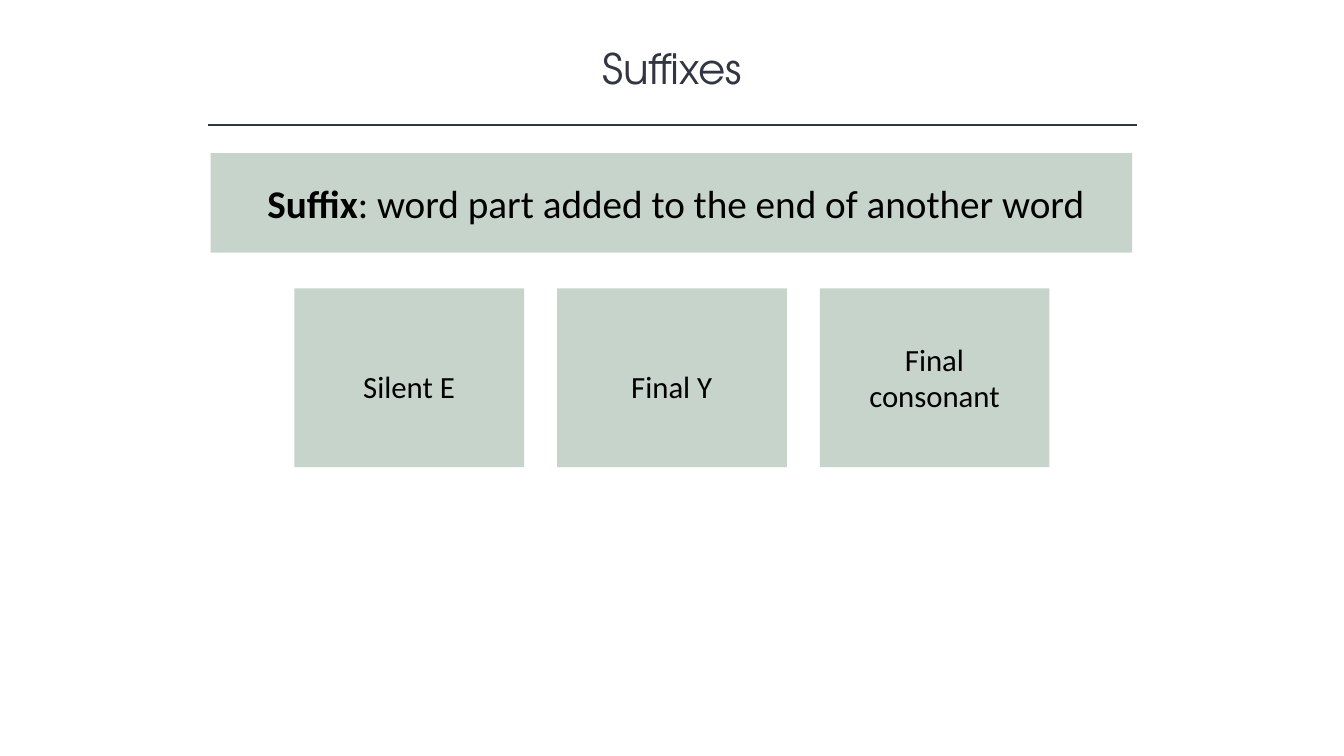
from pptx import Presentation
from pptx.dml.color import RGBColor
from pptx.enum.shapes import MSO_CONNECTOR, MSO_SHAPE
from pptx.enum.text import MSO_ANCHOR, PP_ALIGN
from pptx.oxml.ns import qn
from pptx.util import Cm, Pt
from lxml.etree import SubElement

COLORS = {"ink": "323542", "sage": "C7D4CB", "black": "000000"}


def color(name):
    return RGBColor.from_string(COLORS[name])


def write(shape, *runs, size, font="Calibri", ink="black", space=1.0, anchor=MSO_ANCHOR.MIDDLE):
    frame = shape.text_frame
    frame.word_wrap = True
    frame.vertical_anchor = anchor
    para = frame.paragraphs[0]
    para.alignment = PP_ALIGN.CENTER
    para.line_spacing = space
    for text, bold in runs:
        run = para.add_run()
        run.text = text
        run.font.size = Pt(size)
        run.font.name = font
        run.font.bold = bold
        run.font.color.rgb = color(ink)


def add_box(slide, left, top, width, height):
    box = slide.shapes.add_shape(
        MSO_SHAPE.RECTANGLE, Cm(left), Cm(top), Cm(width), Cm(height))
    box.shadow.inherit = False
    box.fill.solid()
    box.fill.fore_color.rgb = color("sage")
    box.line.fill.background()
    return box


def add_title(slide, text):
    box = slide.shapes.add_textbox(Cm(4.24), Cm(0.94), Cm(25.4), Cm(1.55))
    write(box, (text, False), size=30, font="TeX Gyre Adventor", ink="ink",
          anchor=MSO_ANCHOR.TOP)


def add_rule(slide, left, right, top):
    rule = slide.shapes.add_connector(
        MSO_CONNECTOR.STRAIGHT, Cm(left), Cm(top), Cm(right), Cm(top))
    rule.line.color.rgb = color("ink")
    rule.line.width = Pt(1)
    SubElement(rule._element.spPr, qn("a:effectLst"))


def add_card(slide, left, top, text, drop=1.48, height=1.52, space=1.5):
    add_box(slide, left, top, 5.79, 4.5)
    label = add_box(slide, left + 0.58, top + drop, 4.62, height)
    write(label, (text, False), size=22, space=space)


def main():
    deck = Presentation()
    deck.slide_width = Cm(33.87)
    deck.slide_height = Cm(19.05)
    slide = deck.slides.add_slide(deck.slide_layouts[6])

    add_title(slide, "Suffixes")
    add_rule(slide, 5.23, 28.65, 3.15)
    banner = add_box(slide, 5.31, 3.86, 23.22, 2.51)
    write(banner, (" ", False), ("Suffix", True),
          (": word part added to the end of another word", False), size=28)

    left, step, top = 7.42, 6.62, 7.27
    add_card(slide, left, top, "Silent E")
    add_card(slide, left + step, top, "Final Y")
    add_card(slide, left + 2 * step, top, "Final consonant",
             drop=1.17, height=2.13, space=1.0)

    deck.save("out.pptx")


if __name__ == "__main__":
    main()
